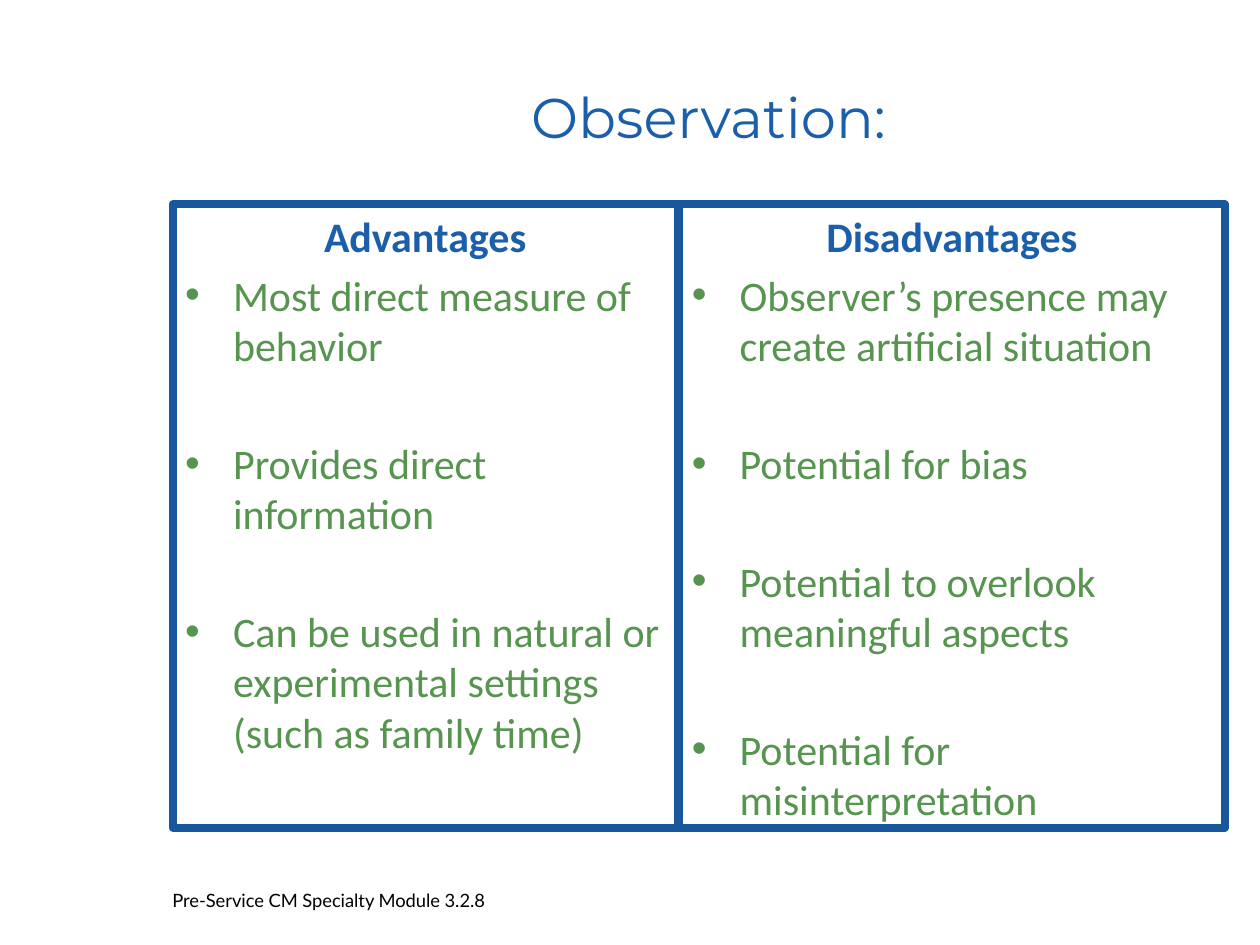
from pptx import Presentation
from pptx.dml.color import RGBColor
from pptx.enum.text import MSO_ANCHOR, MSO_AUTO_SIZE, PP_ALIGN
from pptx.oxml.ns import qn
from pptx.util import Inches, Pt
from lxml import etree


def color(value):
    return RGBColor.from_string(value)


def add_run(paragraph, text, font_name, size, font_color, bold=False):
    run = paragraph.add_run()
    run.text = text
    run.font.name = font_name
    run.font.size = Pt(size)
    run.font.bold = bold
    run.font.color.rgb = color(font_color)


BLUE = "1B5FAA"
GREEN = "56944F"
BORDER = "18579B"

presentation = Presentation()
presentation.slide_width = Inches(10)
presentation.slide_height = Inches(7.5)
slide = presentation.slides.add_slide(presentation.slide_layouts[3])

title = slide.shapes.title
title.left, title.top = Inches(1.75), Inches(0.3)
title.width, title.height = Inches(7.75), Inches(1.25)
title.text_frame.vertical_anchor = MSO_ANCHOR.MIDDLE
title.text_frame.auto_size = MSO_AUTO_SIZE.NONE
paragraph = title.text_frame.paragraphs[0]
paragraph.alignment = PP_ALIGN.CENTER
add_run(paragraph, "Observation:", "Montserrat", 32, BLUE)

columns = [
    (1, 1.37, 4.01, "Advantages", [
        "Most direct measure of behavior",
        "Provides direct information",
        "Can be used in natural or experimental settings (such as family time)",
    ]),
    (2, 5.39, 4.33, "Disadvantages", [
        "Observer’s presence may create artificial situation",
        "Potential for bias",
        "Potential to overlook meaningful aspects",
        "Potential for misinterpretation",
    ]),
]

for index, left, width, heading, points in columns:
    body = slide.placeholders[index]
    body.left, body.top = Inches(left), Inches(1.62)
    body.width, body.height = Inches(width), Inches(4.95)
    body.line.color.rgb = color(BORDER)
    body.line.width = Pt(4.5)
    text_frame = body.text_frame
    text_frame.auto_size = MSO_AUTO_SIZE.NONE

    paragraph = text_frame.paragraphs[0]
    paragraph.alignment = PP_ALIGN.CENTER
    paragraph.space_before = Pt(0)
    properties = paragraph._p.get_or_add_pPr()
    properties.set("marL", "0")
    properties.set("indent", "0")
    etree.SubElement(properties, qn("a:buNone"))
    add_run(paragraph, heading, "Calibri", 24, BLUE, True)

    for number, point in enumerate(points):
        paragraph = text_frame.add_paragraph()
        paragraph.space_before = Pt(38.5 if number else 4.8)
        properties = paragraph._p.get_or_add_pPr()
        properties.set("marL", str(Inches(0.38)))
        properties.set("indent", str(Inches(-0.38)))
        etree.SubElement(properties, qn("a:buChar")).set("char", "•")
        add_run(paragraph, point, "Calibri", 24, GREEN)

footer = slide.shapes.add_textbox(Inches(1.27), Inches(7.01), Inches(2.99), Inches(0.33))
footer.text_frame.word_wrap = True
add_run(footer.text_frame.paragraphs[0], "Pre-Service CM Specialty Module 3.2.8",
        "Lato", 10.5, "000000")

presentation.save("out.pptx")
